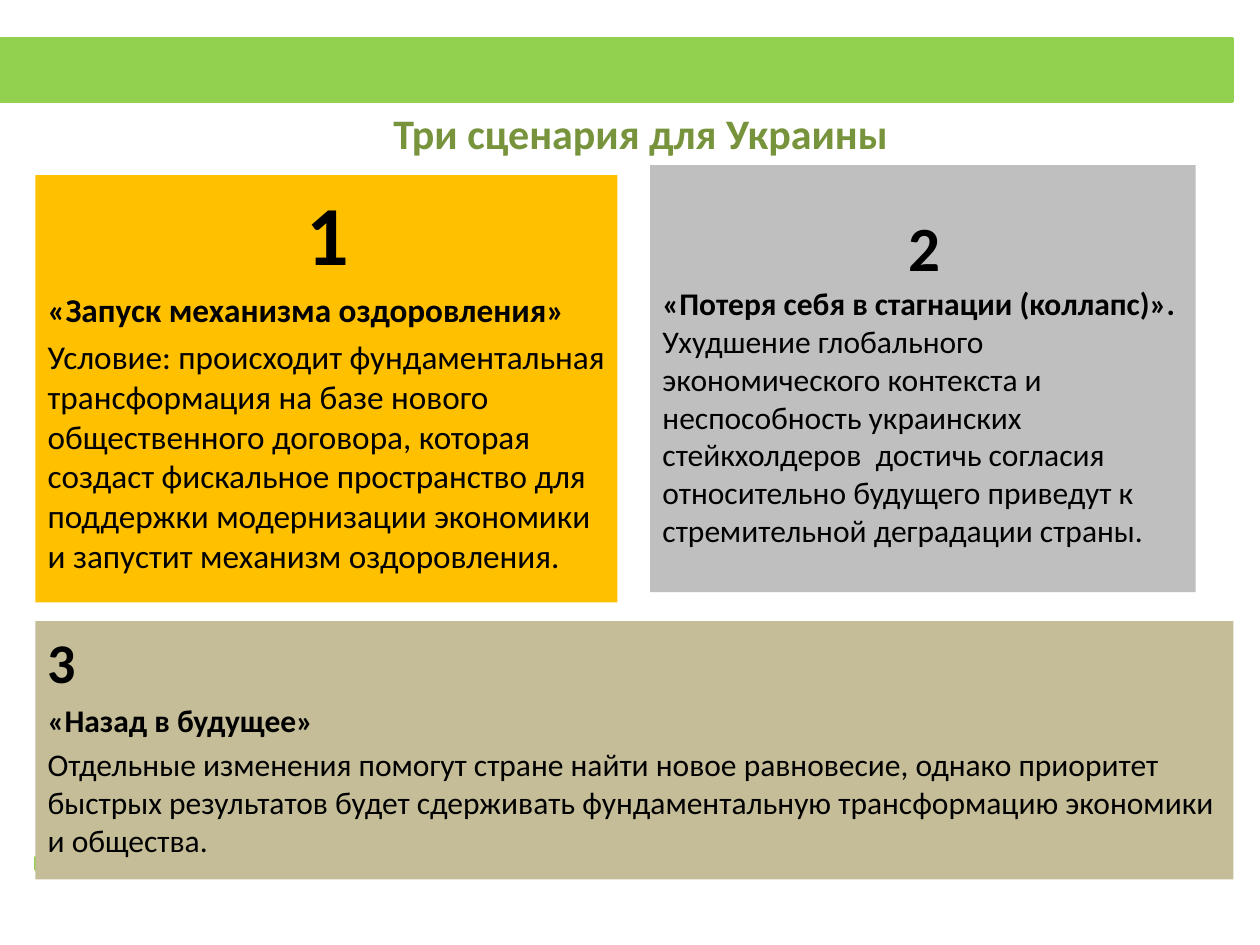
from pptx import Presentation
from pptx.dml.color import RGBColor
from pptx.enum import shapes, text
from pptx.util import Inches, Pt

COLORS = {
    "title": "77933C", "text": "000000", "bar": "92D050",
    "recovery": "FFC000", "stagnation": "BFBFBF", "return": "C4BD97",
}
LEFT, CENTER = text.PP_ALIGN.LEFT, text.PP_ALIGN.CENTER
TOP, MIDDLE = text.MSO_ANCHOR.TOP, text.MSO_ANCHOR.MIDDLE


def add_rect(s, at, color, line=None):
    sp = s.shapes.add_shape(shapes.MSO_SHAPE.RECTANGLE, *map(Inches, at))
    sp.shadow.inherit = False
    sp.fill.solid()
    sp.fill.fore_color.rgb = RGBColor.from_string(COLORS[color])
    if line:
        sp.line.color.rgb = RGBColor.from_string(COLORS[color])
        sp.line.width = Pt(line)
    else:
        sp.line.fill.background()
    return sp


def add_text(tf, words, size, bold=False, align=LEFT, color="text", before=0):
    """Write one paragraph, using the empty first one if it is free."""
    p = tf.paragraphs[0]
    if p.runs:
        p = tf.add_paragraph()
    p.alignment = align
    p.space_before = Pt(before)
    r = p.add_run()
    r.text = words
    r.font.name = "Calibri"
    r.font.size = Pt(size)
    r.font.bold = bold
    r.font.color.rgb = RGBColor.from_string(COLORS[color])


prs = Presentation()
prs.slide_width, prs.slide_height = Inches(10), Inches(7.5)
s = prs.slides.add_slide(prs.slide_layouts[6])

title = s.shapes.add_textbox(Inches(0.5), Inches(0.8), Inches(9.17), Inches(0.51))
tf = title.text_frame
tf.word_wrap = True
tf.vertical_anchor = MIDDLE
add_text(tf, "Три сценария для Украины", 24, bold=True, align=CENTER, color="title")

for at in [(0.01, 0.31, 9.77, 0.49), (0.28, 6.81, 9.39, 0.09)]:
    add_rect(s, at, "bar", line=2)

# position, fill, anchor, number, number size, number alignment, text size, gap, heading, body
scenarios = [
    ((0.28, 1.39, 4.62, 3.39), "recovery", TOP, "1", 48, CENTER, 19, 4,
     "«Запуск механизма оздоровления»",
     "Условие: происходит фундаментальная трансформация на базе нового "
     "общественного договора, которая создаст фискальное пространство для "
     "поддержки модернизации экономики и запустит механизм оздоровления."),
    ((0.28, 4.93, 9.51, 2.05), "return", TOP, "3", 32, LEFT, 18, 3.6,
     "«Назад в будущее»",
     "Отдельные изменения помогут стране найти новое равновесие, однако "
     "приоритет быстрых результатов будет сдерживать фундаментальную "
     "трансформацию экономики и общества."),
    ((5.16, 1.31, 4.33, 3.39), "stagnation", MIDDLE, "2", 36, CENTER, 18, 0,
     "«Потеря себя в стагнации (коллапс)».",
     "Ухудшение глобального экономического контекста и неспособность "
     "украинских стейкхолдеров  достичь согласия относительно будущего "
     "приведут к стремительной деградации страны."),
]
for at, fill, anchor, number, number_size, align, size, gap, heading, body in scenarios:
    tf = add_rect(s, at, fill).text_frame
    tf.word_wrap = True
    tf.vertical_anchor = anchor
    tf.margin_right = Inches(0.08)
    add_text(tf, number, number_size, bold=True, align=align)
    add_text(tf, heading, size, bold=True, before=gap)
    add_text(tf, body, size, before=gap)

prs.save("out.pptx")
